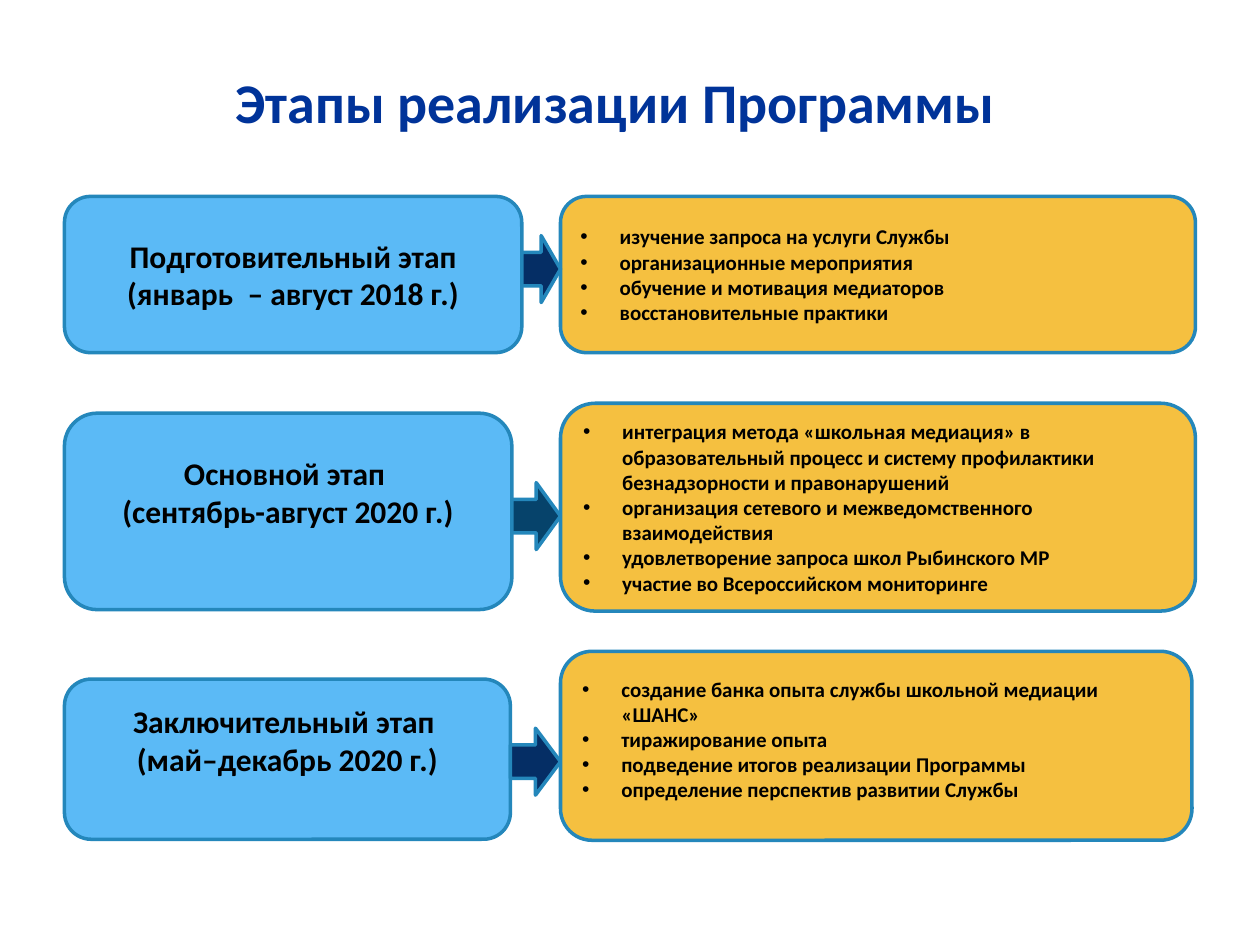
import pptx
import pptx.util
import pptx.dml.color
import pptx.enum.shapes
import pptx.enum.text
import pptx.oxml.ns
from lxml import etree

Cm, Pt = pptx.util.Cm, pptx.util.Pt
Kind = pptx.enum.shapes.MSO_SHAPE
Align = pptx.enum.text.PP_ALIGN

FONT = "Calibri"
COLORS = {
    "title": "003399", "text": "000000", "line": "2487BB",
    "stage": "5BBAF6", "tasks": "F5C040",
    "navy": "052E65", "teal": "06436B",
}
TITLE = "Этапы реализации Программы"

# Each part gives top, width and height in cm; "lift" is extra bottom inset.
STAGES = [
    {
        "name": ["Подготовительный этап (январь  – август 2018 г.)"],
        "stage": (3.96, 9.22, 3.15), "lift": 0,
        "tasks": (3.96, 12.8, 3.15), "rise": 0,
        "arrow": (4.75, "navy"),
        "items": [
            "изучение запроса на услуги Службы",
            "организационные мероприятия",
            "обучение и мотивация медиаторов",
            "восстановительные практики",
        ],
    },
    {
        "name": ["Основной этап ", "(сентябрь-август 2020 г.)"],
        "stage": (8.33, 9.02, 3.96), "lift": 0.77,
        "tasks": (8.13, 12.8, 4.19), "rise": 0,
        "arrow": (9.73, "teal"),
        "items": [
            "интеграция метода «школьная медиация» в образовательный процесс "
            "и систему профилактики безнадзорности и правонарушений",
            "организация сетевого и межведомственного взаимодействия",
            "удовлетворение запроса школ Рыбинского МР",
            "участие во Всероссийском мониторинге",
        ],
    },
    {
        "name": ["Заключительный этап ", "(май–декабрь 2020 г.)"],
        "stage": (13.69, 8.99, 3.23), "lift": 0.77,
        "tasks": (13.13, 12.73, 3.81), "rise": 0.26,
        "arrow": (14.68, "navy"),
        "items": [
            "создание банка опыта службы школьной медиации «ШАНС»",
            "тиражирование опыта",
            "подведение итогов реализации Программы",
            "определение перспектив развитии Службы",
        ],
    },
]
STAGE_X, TASKS_X, ARROW_H = 1.3, 11.3, 1.35
INSET, INDENT = 0.13, 0.79


def color(key):
    return pptx.dml.color.RGBColor.from_string(COLORS[key])


def bullet(para):
    props = para._p.get_or_add_pPr()
    props.set("marL", str(Cm(INDENT)))
    props.set("indent", str(-Cm(INDENT)))
    tag = pptx.oxml.ns.qn
    etree.SubElement(props, tag("a:buFont")).set("typeface", "Arial")
    etree.SubElement(props, tag("a:buChar")).set("char", "•")


def write(shape, lines, size, ink="text", align=Align.CENTER, dots=False):
    frame = shape.text_frame
    frame.word_wrap = True
    frame.vertical_anchor = pptx.enum.text.MSO_ANCHOR.MIDDLE
    for i, line in enumerate(lines):
        para = frame.add_paragraph() if i else frame.paragraphs[0]
        if dots:
            bullet(para)
        para.alignment = align
        run = para.add_run()
        run.text = line
        font = run.font
        font.name, font.size, font.bold = FONT, Pt(size), True
        font.color.rgb = color(ink)


def draw(slide, kind, left, top, width, height, fill):
    shape = slide.shapes.add_shape(
        kind, Cm(left), Cm(top), Cm(width), Cm(height))
    shape.shadow.inherit = False
    shape.fill.solid()
    shape.fill.fore_color.rgb = color(fill)
    shape.line.color.rgb = color("line")
    shape.line.width = Pt(2)
    return shape


def block(slide, left, place, fill, lift):
    shape = draw(slide, Kind.ROUNDED_RECTANGLE, left, *place, fill)
    shape.text_frame.margin_bottom = Cm(INSET + lift)
    return shape


def main():
    deck = pptx.Presentation()
    deck.slide_width, deck.slide_height = Cm(25.4), Cm(19.05)
    slide = deck.slides.add_slide(deck.slide_layouts[6])

    title = slide.shapes.add_textbox(Cm(1.27), Cm(0.76), Cm(22.86), Cm(2.57))
    title.text_frame.margin_right = Cm(0.82)
    write(title, [TITLE], 32, "title")

    for row in STAGES:
        stage = block(slide, STAGE_X, row["stage"], "stage", row["lift"])
        write(stage, row["name"], 18)
        tasks = block(slide, TASKS_X, row["tasks"], "tasks", row["rise"])
        write(tasks, row["items"], 12, align=Align.LEFT, dots=True)
        top, fill = row["arrow"]
        start = STAGE_X + row["stage"][1]
        draw(slide, Kind.RIGHT_ARROW, start, top, TASKS_X - start, ARROW_H, fill)

    deck.save("out.pptx")


if __name__ == "__main__":
    main()
